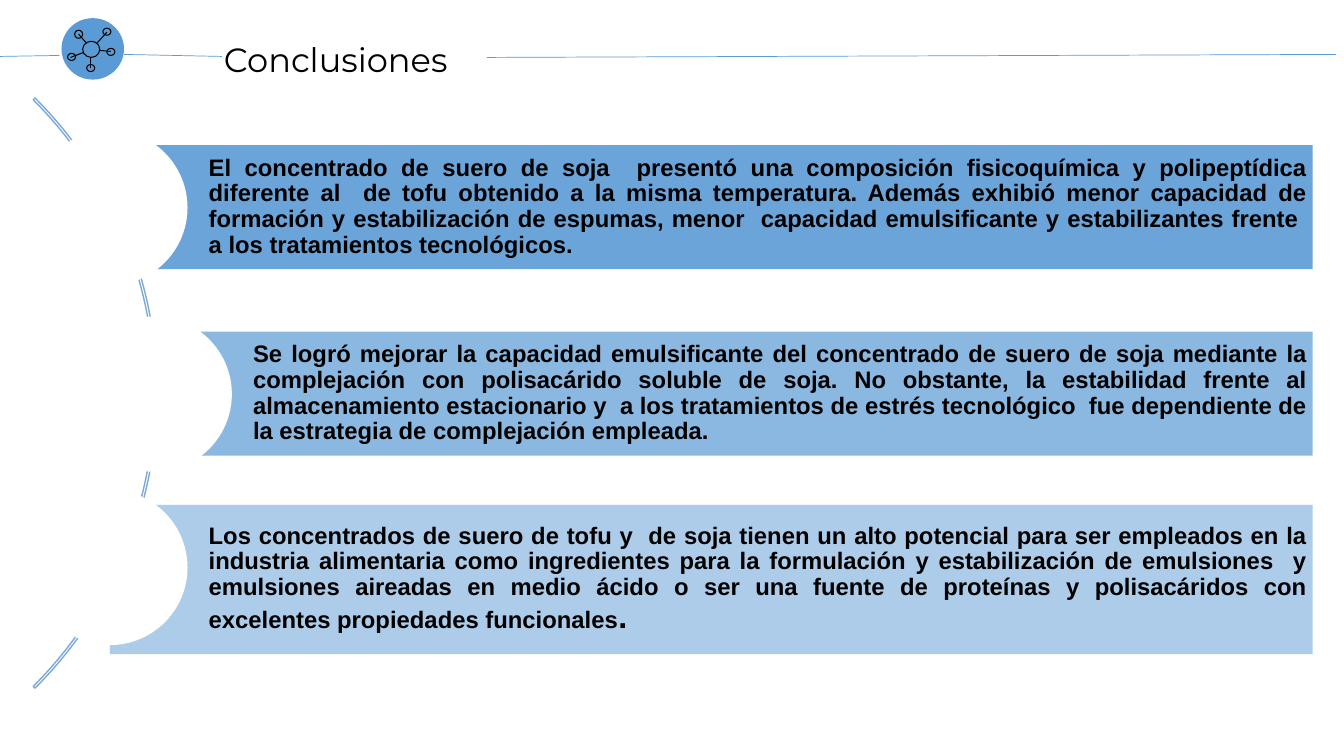
from dataclasses import dataclass

from lxml import etree
from pptx import Presentation
from pptx.dml.color import RGBColor
from pptx.enum.shapes import MSO_CONNECTOR, MSO_SHAPE
from pptx.enum.text import MSO_ANCHOR, MSO_AUTO_SIZE, PP_ALIGN
from pptx.oxml.ns import qn
from pptx.shapes.autoshape import Shape
from pptx.util import Emu, Pt

PX = 9144  # EMU per px, 100 px to the inch

BLUE = RGBColor(0x5B, 0x9B, 0xD5)
ARC_BLUE = RGBColor(0x7A, 0xA9, 0xDA)
BLACK = RGBColor(0, 0, 0)
WHITE = RGBColor(0xFF, 0xFF, 0xFF)

OVAL = MSO_SHAPE.OVAL
RECTANGLE = MSO_SHAPE.RECTANGLE
BLOCK_ARC = MSO_SHAPE.BLOCK_ARC
STRAIGHT = MSO_CONNECTOR.STRAIGHT
TOP = MSO_ANCHOR.TOP
MIDDLE = MSO_ANCHOR.MIDDLE
GROW = MSO_AUTO_SIZE.SHAPE_TO_FIT_TEXT
LEFT = PP_ALIGN.LEFT
JUSTIFY = PP_ALIGN.JUSTIFY

BAND_RIGHT = 1302
NOTCH_SIZE = 154
NOTCH_RISE = 15  # notch top above band top


@dataclass(frozen=True)
class Box:
    left: int
    top: int
    width: int
    height: int


@dataclass(frozen=True)
class Stroke:
    x1: int
    y1: int
    x2: int
    y2: int


@dataclass(frozen=True)
class Band:
    left: int
    top: int
    height: int
    opacity: int
    runs: tuple[tuple[str, int], ...]


HEADER_RULES = (
    Stroke(123, 54, 220, 56),
    Stroke(483, 57, 1325, 54),
    Stroke(0, 56, 59, 55),
)
ATOMS = (
    Box(82, 41, 17, 16),
    Box(102, 28, 8, 7),
    Box(74, 30, 8, 8),
    Box(67, 53, 8, 7),
    Box(86, 64, 8, 7),
    Box(106, 48, 8, 7),
)
BONDS = (
    Stroke(78, 34, 86, 43),
    Stroke(96, 43, 106, 32),
    Stroke(110, 51, 99, 50),
    Stroke(90, 67, 90, 57),
    Stroke(70, 57, 83, 52),
)
BANDS = (
    Band(109, 144, 123, 90, ((
        "El concentrado de suero de soja  presentó una composición fisicoquímica y "
        "polipeptídica diferente al  de tofu obtenido a la misma temperatura. Además "
        "exhibió menor capacidad de formación y estabilización de espumas, menor  "
        "capacidad emulsificante y estabilizantes frente  a los tratamientos "
        "tecnológicos.", 17),)),
    Band(153, 329, 123, 70, ((
        "Se logró mejorar la capacidad emulsificante del concentrado de suero de soja "
        "mediante la complejación con polisacárido soluble de soja. No obstante, la "
        "estabilidad frente al almacenamiento estacionario y  a los tratamientos de "
        "estrés tecnológico  fue dependiente de la estrategia de complejación "
        "empleada.", 17),)),
    Band(109, 501, 148, 50, ((
        "Los concentrados de suero de tofu y  de soja tienen un alto potencial para ser "
        "empleados en la industria alimentaria como ingredientes para la formulación y "
        "estabilización de emulsiones  y emulsiones aireadas en medio ácido o ser una "
        "fuente de proteínas y polisacáridos con excelentes propiedades funcionales",
        17), (".", 23))),
)


def px(length: int) -> Emu:
    return Emu(length * PX)


def apply_format(target: object, values: dict[str, object]) -> None:
    for name, value in values.items():
        setattr(target, name, value)


def add_figure(shapes, kind, box: Box, fill: RGBColor | None = None,
               line: RGBColor | None = None, line_width: float = 0.75) -> Shape:
    figure = shapes.add_shape(kind, px(box.left), px(box.top), px(box.width), px(box.height))
    figure.shadow.inherit = False
    if fill is None:
        figure.fill.background()
    else:
        figure.fill.solid()
        figure.fill.fore_color.rgb = fill
    if line is None:
        figure.line.fill.background()
    else:
        figure.line.color.rgb = line
        figure.line.width = Pt(line_width)
    return figure


def add_stroke(shapes, stroke: Stroke, color: RGBColor, width: float) -> None:
    rule = shapes.add_connector(STRAIGHT, px(stroke.x1), px(stroke.y1),
                                px(stroke.x2), px(stroke.y2))
    rule.line.color.rgb = color
    rule.line.width = Pt(width)
    etree.SubElement(rule.element.spPr, qn("a:effectLst"))


def add_band(shapes, band: Band) -> None:
    bar = add_figure(shapes, RECTANGLE,
                     Box(band.left, band.top, BAND_RIGHT - band.left, band.height), BLUE)
    bar_color = bar.element.spPr.find(".//" + qn("a:srgbClr"))
    etree.SubElement(bar_color, qn("a:alpha"), val=str(band.opacity * 1000))

    apply_format(bar.text_frame, {
        "word_wrap": True, "vertical_anchor": MIDDLE, "margin_left": px(98),
        "margin_top": px(5), "margin_right": px(5), "margin_bottom": px(5)})
    conclusion = bar.text_frame.paragraphs[0]
    apply_format(conclusion, {"alignment": JUSTIFY, "line_spacing": 0.9})
    for words, size in band.runs:
        run = conclusion.add_run()
        run.text = words
        apply_format(run.font, {"name": "Arial", "size": Pt(size), "bold": True})
        run.font.color.rgb = BLACK

    # Round notch that cuts into the band
    add_figure(shapes, OVAL, Box(band.left - NOTCH_SIZE // 2, band.top - NOTCH_RISE,
                                 NOTCH_SIZE, NOTCH_SIZE), WHITE)


def format_title(title) -> None:
    apply_format(title, {"left": px(212), "top": px(34), "width": px(654), "height": px(50)})
    title.text_frame.text = "Conclusiones"
    apply_format(title.text_frame, {
        "word_wrap": True, "auto_size": GROW, "vertical_anchor": TOP,
        "margin_left": px(10), "margin_top": px(5),
        "margin_right": px(10), "margin_bottom": px(5)})
    heading = title.text_frame.paragraphs[0]
    heading.alignment = LEFT
    font = heading.runs[0].font
    apply_format(font, {"name": "Montserrat", "size": Pt(24), "bold": False})
    font.color.rgb = BLACK


def main() -> None:
    deck = Presentation()
    apply_format(deck, {"slide_width": px(1333), "slide_height": px(750)})
    slide = deck.slides.add_slide(deck.slide_layouts.get_by_name("Title Only"))
    shapes = slide.shapes

    # Header: title, rules and molecule badge
    format_title(shapes.title)
    for rule in HEADER_RULES:
        add_stroke(shapes, rule, BLUE, 0.5)
    add_figure(shapes, OVAL, Box(61, 18, 62, 61), BLUE)
    for atom in ATOMS:
        add_figure(shapes, OVAL, atom, line=BLACK)
    for bond in BONDS:
        add_stroke(shapes, bond, BLACK, 0.75)

    # Arc behind the conclusions
    arc = add_figure(shapes, BLOCK_ARC, Box(-672, -24, 828, 828), line=ARC_BLUE, line_width=1)
    for index, value in enumerate((189, 27, 0.003)):
        arc.adjustments[index] = value

    # Conclusions
    for band in BANDS:
        add_band(shapes, band)

    deck.save("out.pptx")


if __name__ == "__main__":
    main()
